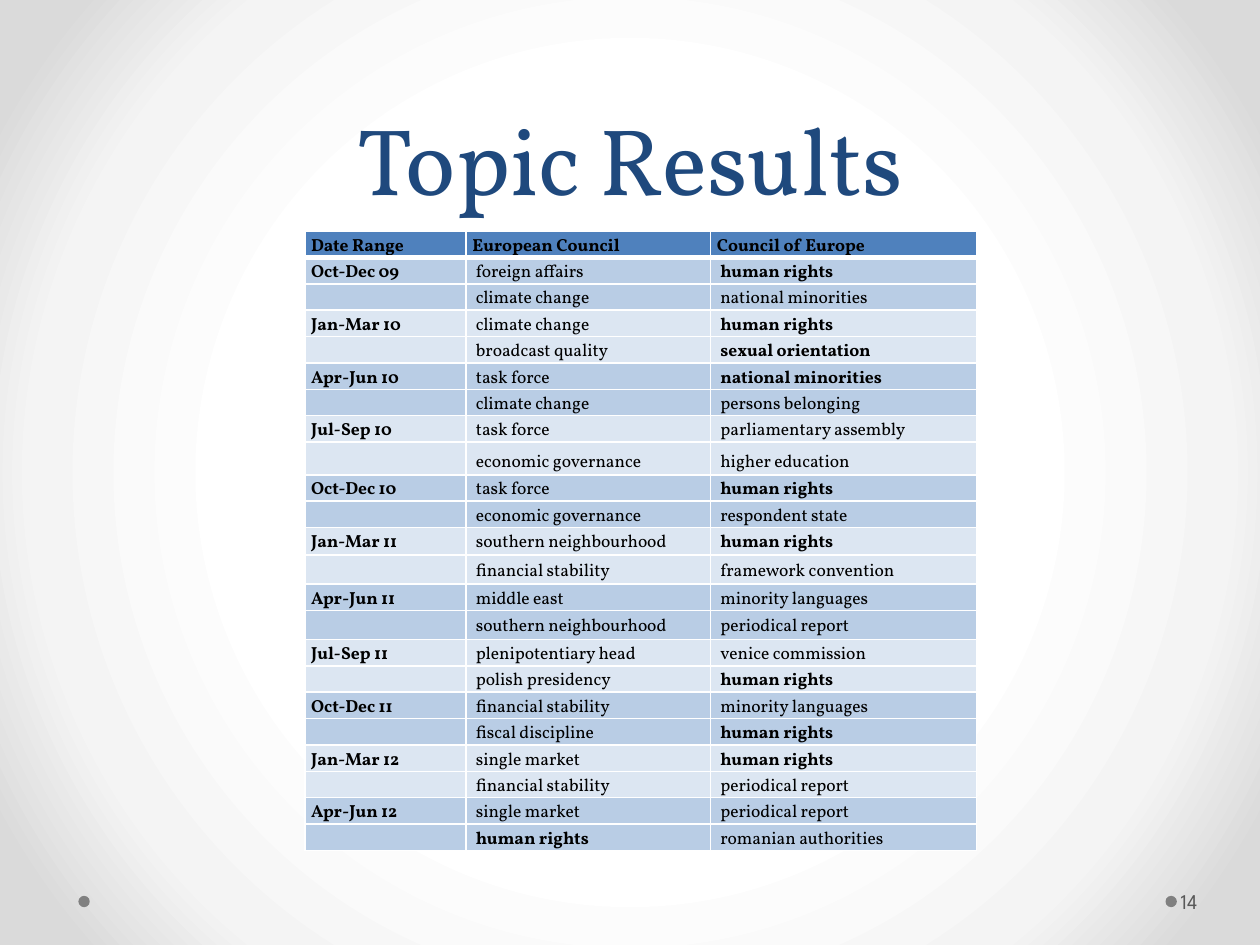
from dataclasses import dataclass

import lxml.etree
import pptx
import pptx.dml.color
import pptx.enum.shapes
import pptx.enum.text
import pptx.oxml.ns
import pptx.util

Pt = pptx.util.Pt
qn = pptx.oxml.ns.qn
Anchor = pptx.enum.text.MSO_ANCHOR
Align = pptx.enum.text.PP_ALIGN

SERIF, SANS = "Vollkorn", "League Spartan"
NAVY, BLUE, BLACK, WHITE = "1F497D", "4F81BD", "000000", "FFFFFF"
BANDS = ("B9CDE5", "DCE6F2")


@dataclass(frozen=True)
class Topic:
    text: str
    bold: bool = False


@dataclass(frozen=True)
class Quarter:
    dates: str
    european_council: tuple[Topic, Topic]
    council_of_europe: tuple[Topic, Topic]


HEADINGS = ("Date Range", "European Council", "Council of Europe")
RIGHTS = Topic("human rights", True)
CLIMATE = Topic("climate change")
TASK_FORCE = Topic("task force")
GOVERNANCE = Topic("economic governance")
NEIGHBOURHOOD = Topic("southern neighbourhood")
STABILITY = Topic("financial stability")
MARKET = Topic("single market")
LANGUAGES = Topic("minority languages")
REPORT = Topic("periodical report")

QUARTERS = (
    Quarter("Oct-Dec 09", (Topic("foreign affairs"), CLIMATE),
            (RIGHTS, Topic("national minorities"))),
    Quarter("Jan-Mar 10", (CLIMATE, Topic("broadcast quality")),
            (RIGHTS, Topic("sexual orientation", True))),
    Quarter("Apr-Jun 10", (TASK_FORCE, CLIMATE),
            (Topic("national minorities", True), Topic("persons belonging"))),
    Quarter("Jul-Sep 10", (TASK_FORCE, GOVERNANCE),
            (Topic("parliamentary assembly"), Topic("higher education"))),
    Quarter("Oct-Dec 10", (TASK_FORCE, GOVERNANCE),
            (RIGHTS, Topic("respondent state"))),
    Quarter("Jan-Mar 11", (NEIGHBOURHOOD, STABILITY),
            (RIGHTS, Topic("framework convention"))),
    Quarter("Apr-Jun 11", (Topic("middle east"), NEIGHBOURHOOD),
            (LANGUAGES, REPORT)),
    Quarter("Jul-Sep 11", (Topic("plenipotentiary head"), Topic("polish presidency")),
            (Topic("venice commission"), RIGHTS)),
    Quarter("Oct-Dec 11", (STABILITY, Topic("fiscal discipline")),
            (LANGUAGES, RIGHTS)),
    Quarter("Jan-Mar 12", (MARKET, STABILITY), (RIGHTS, REPORT)),
    Quarter("Apr-Jun 12", (MARKET, RIGHTS),
            (REPORT, Topic("romanian authorities"))),
)

COLUMN_WIDTHS = (92.2, 139.7, 151.9)
ROW_HEIGHT = 15.1
TALLER_ROWS = {8: 18.7, 11: 15.8, 12: 16.5, 14: 16.5}


def color(hex_code: str) -> pptx.dml.color.RGBColor:
    return pptx.dml.color.RGBColor.from_string(hex_code)


def write(frame, text: str, *, size: float, font: str = SERIF, ink: str = BLACK,
          bold: bool = False, align=Align.LEFT, spacing=None) -> None:
    paragraph = frame.paragraphs[0]
    paragraph.alignment = align
    paragraph.line_spacing = spacing
    if not text:
        # An empty cell still needs a small font, or its row grows
        lxml.etree.SubElement(paragraph._p, qn("a:endParaRPr"), sz=str(int(size * 100)))
        return
    run = paragraph.add_run()
    run.text = text
    run.font.size, run.font.name, run.font.bold = Pt(size), font, bold
    run.font.color.rgb = color(ink)


def add_label(slide, box: tuple, text: str, *, anchor, left_inset: float = 7.2,
              right_inset: float = 7.2, **text_format) -> None:
    frame = slide.shapes.add_textbox(*map(Pt, box)).text_frame
    frame.word_wrap = True
    frame.vertical_anchor = anchor
    frame.margin_left, frame.margin_right = Pt(left_inset), Pt(right_inset)
    write(frame, text, **text_format)


def add_dot(slide, left: float) -> None:
    dot = slide.shapes.add_shape(pptx.enum.shapes.MSO_SHAPE.OVAL,
                                 Pt(left), Pt(511.9), Pt(6.5), Pt(6.5))
    dot.shadow.inherit = False
    dot.fill.solid()
    dot.fill.fore_color.rgb = color("808080")
    dot.line.fill.background()


def paint_background(slide, stops: tuple) -> None:
    slide.background.fill.gradient()
    gradient = slide.element.find(".//" + qn("a:gradFill"))
    for child in list(gradient):
        gradient.remove(child)
    stop_list = lxml.etree.SubElement(gradient, qn("a:gsLst"))
    for percent, hex_code in stops:
        stop = lxml.etree.SubElement(stop_list, qn("a:gs"), pos=str(percent * 1000))
        lxml.etree.SubElement(stop, qn("a:srgbClr"), val=hex_code)
    circle = lxml.etree.SubElement(gradient, qn("a:path"), {"path": "circle"})
    lxml.etree.SubElement(circle, qn("a:fillToRect"),
                          dict.fromkeys("ltrb", "50000"))


def set_borders(cell, top: float = 1, bottom: float = 1) -> None:
    properties = cell._tc.get_or_add_tcPr()
    for side, width in (("L", 1), ("R", 1), ("T", top), ("B", bottom)):
        line = lxml.etree.SubElement(properties, qn(f"a:ln{side}"), w=str(Pt(width)))
        fill = lxml.etree.SubElement(line, qn("a:solidFill"))
        lxml.etree.SubElement(fill, qn("a:srgbClr"), val=WHITE)


def fill_cell(cell, topic: Topic, fill: str, *, indent: float = 0,
              top: float = 1, bottom: float = 1) -> None:
    cell.margin_left, cell.margin_right = Pt(3.6 + indent), Pt(3.6)
    cell.margin_top = cell.margin_bottom = 0
    cell.vertical_anchor = Anchor.BOTTOM
    set_borders(cell, top, bottom)
    cell.fill.solid()
    cell.fill.fore_color.rgb = color(fill)
    write(cell.text_frame, topic.text, size=10, bold=topic.bold, spacing=1.15)


def add_topic_table(slide) -> None:
    row_count = 1 + 2 * len(QUARTERS)
    heights = [TALLER_ROWS.get(row, ROW_HEIGHT) for row in range(row_count)]
    table = slide.shapes.add_table(
        row_count, len(HEADINGS), Pt(174.2), Pt(132),
        Pt(sum(COLUMN_WIDTHS)), Pt(sum(heights))).table
    for column, width in zip(table.columns, COLUMN_WIDTHS):
        column.width = Pt(width)
    for row, height in zip(table.rows, heights):
        row.height = Pt(height)

    # Heading row, set off by a thicker rule
    for column, heading in enumerate(HEADINGS):
        fill_cell(table.cell(0, column), Topic(heading, True), BLUE, bottom=3)

    # Two topic rows per quarter, banded by quarter
    for index, quarter in enumerate(QUARTERS):
        dates = (Topic(quarter.dates, True), Topic(""))
        pairs = zip(dates, quarter.european_council, quarter.council_of_europe)
        for row, topics in enumerate(pairs, start=1 + 2 * index):
            for column, topic in enumerate(topics):
                fill_cell(table.cell(row, column), topic, BANDS[index % 2],
                          indent=2 if column else 0, top=3 if row == 1 else 1)


def main() -> None:
    deck = pptx.Presentation()
    deck.slide_width, deck.slide_height = Pt(720), Pt(540)
    slide = deck.slides.add_slide(deck.slide_layouts[6])

    # Backdrop and footer dots
    paint_background(slide, ((50, WHITE), (76, "F4F4F4"), (92, "DADADA")))
    for left in (666, 44.8):
        add_dot(slide, left)

    # Title, results and page number
    add_label(slide, (36, 0, 648, 126), "Topic Results", anchor=Anchor.BOTTOM,
              size=54, ink=NAVY, align=Align.CENTER, spacing=Pt(58))
    add_topic_table(slide)
    add_label(slide, (672.5, 500.4, 43.9, 28.8), "14", anchor=Anchor.MIDDLE,
              left_inset=2.2, right_inset=3.6, size=12, font=SANS, ink="595959")

    deck.save("out.pptx")


if __name__ == "__main__":
    main()
